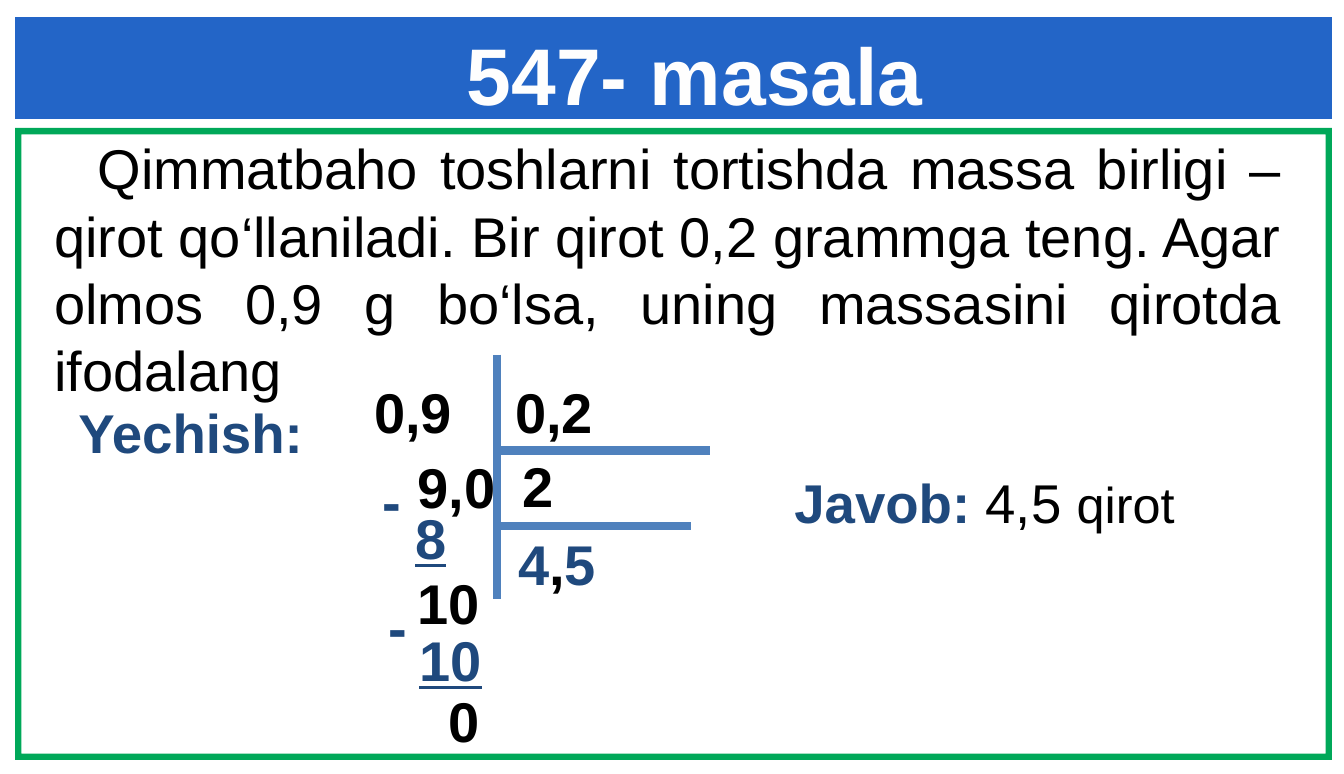
from lxml.etree import SubElement
from pptx import Presentation
from pptx.dml.color import RGBColor
from pptx.enum.shapes import MSO_CONNECTOR, MSO_SHAPE
from pptx.enum.text import MSO_ANCHOR, PP_ALIGN
from pptx.oxml.ns import qn
from pptx.util import Pt

PX = 9144  # EMU per px, 100 px to the inch
BLACK, NAVY, WHITE = "000000", "1F497D", "FEFEFE"
BLUE, GREEN, LINE = "2365C7", "00A859", "4F81BD"


def px(*lengths):
    return [n * PX for n in lengths]


def rgb(color):
    return RGBColor.from_string(color)


def add_run(p, text, size=40, color=BLACK, bold=True, underline=None):
    r = p.add_run()
    r.text = text
    f = r.font
    f.name, f.size, f.bold, f.underline = "Arial", Pt(size), bold, underline
    f.color.rgb = rgb(color)


def fill_text(shape, runs, inset=(10, 5), align=PP_ALIGN.LEFT, indent=0):
    """Write (text, format) pairs as one paragraph; inset is horizontal, vertical."""
    tf = shape.text_frame
    tf.word_wrap = True
    tf.vertical_anchor = MSO_ANCHOR.TOP
    tf.margin_left = tf.margin_right = inset[0] * PX
    tf.margin_top = tf.margin_bottom = inset[1] * PX
    p = tf.paragraphs[0]
    p.alignment = align
    if indent:
        p._p.get_or_add_pPr().set("indent", str(indent * PX))
    for text, style in runs:
        add_run(p, text, **style)


def add_text(s, box, *runs, **layout):
    fill_text(s.shapes.add_textbox(*px(*box)), runs, **layout)


def add_panel(s, kind, box, color):
    sp = s.shapes.add_shape(kind, *px(*box))
    sp.shadow.inherit = False
    sp.fill.solid()
    sp.fill.fore_color.rgb = rgb(color)
    sp.line.fill.background()
    return sp


def add_line(s, *ends):
    line = s.shapes.add_connector(MSO_CONNECTOR.STRAIGHT, *px(*ends))
    line.line.color.rgb = rgb(LINE)
    line.line.width = Pt(6)
    SubElement(line._element.spPr, qn("a:effectLst"))


def add_title(s, text):
    title = s.shapes.title
    title.element.getparent().append(title.element)  # in front of the band
    title.left, title.top, title.width, title.height = px(463, 25, 573, 97)
    fill_text(title, [(text, dict(size=57.4, color=WHITE))], inset=(0, 0))


def add_division(s):
    """Long division of 0,9 by 0,2."""
    add_line(s, 493, 352, 493, 594)
    add_line(s, 493, 447, 704, 447)
    add_line(s, 493, 522, 685, 522)
    navy = dict(color=NAVY)
    subtracted = dict(color=NAVY, underline=True)
    steps = [
        (359, 369, "0,9", {}), (499, 369, "0,2", {}),
        (402, 443, "9,0", {}), (506, 442, "2", {}),
        (367, 457, "-", navy), (400, 494, "8", subtracted),
        (402, 558, "10", {}),
        (373, 582, "-", navy), (404, 615, "10", subtracted),
        (433, 675, "0", {}),
    ]
    for x, y, text, style in steps:
        add_text(s, (x, y, 130, 79), (text, style), inset=(12, 6))
    add_text(s, (502, 519, 130, 79), ("4", navy), (",", {}), ("5", navy),
             inset=(12, 6))


def main():
    prs = Presentation()
    prs.slide_width, prs.slide_height = px(1333, 768)
    s = prs.slides.add_slide(prs.slide_layouts[5])

    frame = add_panel(s, MSO_SHAPE.FRAME, (15, 127, 1306, 627), GREEN)
    frame.adjustments[0] = 0.01
    add_panel(s, MSO_SHAPE.RECTANGLE, (15, 17, 1306, 101), BLUE)
    add_title(s, "547- masala")

    problem = ("Qimmatbaho toshlarni tortishda massa birligi – qirot "
               "qo‘llaniladi. Bir qirot 0,2 grammga teng. Agar olmos 0,9 g "
               "bo‘lsa, uning massasini qirotda ifodalang")
    add_text(s, (44, 128, 1236, 279), (problem, dict(bold=False)),
             align=PP_ALIGN.JUSTIFY, indent=43)
    label = dict(size=39, color=NAVY)
    add_text(s, (68, 391, 346, 76), ("Yechish:", label))
    add_division(s)
    add_text(s, (778, 460, 524, 76), ("Javob: ", label),
             ("4,5 ", dict(size=39, bold=False)),
             ("qirot", dict(size=36, bold=False)))
    prs.save("out.pptx")


if __name__ == "__main__":
    main()
